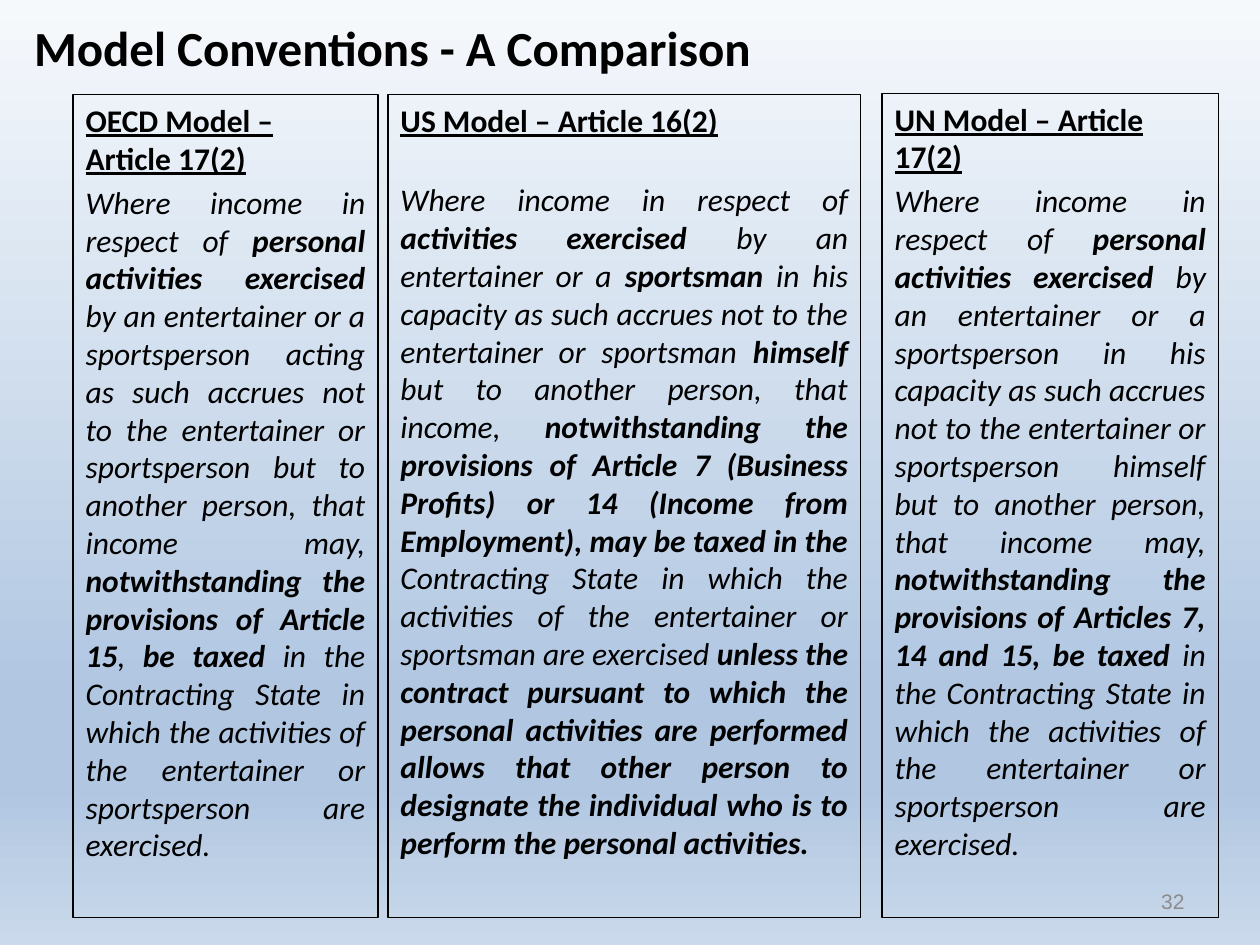
from copy import deepcopy

from pptx import Presentation
from pptx.dml.color import RGBColor
from pptx.enum.shapes import MSO_SHAPE
from pptx.enum.text import MSO_ANCHOR, MSO_AUTO_SIZE, PP_ALIGN
from pptx.oxml.ns import qn
from pptx.util import Inches, Pt

RECT = MSO_SHAPE.RECTANGLE
TOP, MIDDLE = MSO_ANCHOR.TOP, MSO_ANCHOR.MIDDLE
FIXED = MSO_AUTO_SIZE.NONE
LEFT, RIGHT, JUSTIFY = PP_ALIGN.LEFT, PP_ALIGN.RIGHT, PP_ALIGN.JUSTIFY
BLACK = RGBColor(0x00, 0x00, 0x00)
GREY = RGBColor(0x8C, 0x8C, 0x8C)
SKY = [
    (0, RGBColor(0xF6, 0xF9, 0xFC)),
    (0.74, RGBColor(0xB0, 0xC6, 0xE1)),
    (0.83, RGBColor(0xB0, 0xC6, 0xE1)),
    (1, RGBColor(0xCA, 0xD9, 0xEB)),
]

# Asterisks enclose the bold passages.
OECD = (
    "Where income in respect of *personal activities exercised *by an "
    "entertainer or a sportsperson acting as such accrues not to the "
    "entertainer or sportsperson but to another person, that income may, "
    "*notwithstanding the provisions of Article 15*, *be taxed* in the "
    "Contracting State in which the activities of the entertainer or "
    "sportsperson are exercised."
)
UN = (
    "Where income in respect of *personal activities exercised *by an "
    "entertainer or a sportsperson in his capacity as such accrues not to the "
    "entertainer or sportsperson himself but to another person, that income "
    "may, *notwithstanding the provisions of Articles 7, 14 and 15, be taxed "
    "*in the Contracting State in which the activities of the entertainer or "
    "sportsperson are exercised."
)
US = (
    "Where income in respect of *activities exercised* by an entertainer or a "
    "*sportsman* in his capacity as such accrues not to the entertainer or "
    "sportsman *himself *but to another person, that income, "
    "*notwithstanding the provisions of Article 7 (Business Profits) or 14 "
    "(Income from Employment), may be taxed in the *Contracting State in "
    "which the activities of the entertainer or sportsman are exercised "
    "*unless the contract pursuant to which the personal activities are "
    "performed allows that other person to designate the individual who is "
    "to perform the personal activities."
)


class Deck:
    font = "Calibri"
    size = 18
    gap = 3.6

    def __init__(self, slide):
        self.slide = slide

    def backdrop(self, stops):
        fill = self.slide.background.fill
        fill.gradient()
        fill.gradient_angle = 270
        node = next(self.slide.element.iter(qn("a:gsLst")))
        while len(node) < len(stops):
            node.append(deepcopy(node[0]))
        for stop, (place, color) in zip(fill.gradient_stops, stops):
            stop.position = place
            stop.color.rgb = color

    def place(self, shape, left, top, width, height, anchor):
        shape.left, shape.top = Inches(left), Inches(top)
        shape.width, shape.height = Inches(width), Inches(height)
        frame = shape.text_frame
        frame.word_wrap = True
        frame.auto_size = FIXED
        frame.vertical_anchor = anchor
        return frame

    def run(self, para, text, size=None, color=BLACK, name=None, **style):
        run = para.add_run()
        run.text = text
        font = run.font
        font.name = name or self.font
        font.size = Pt(size or self.size)
        font.color.rgb = color
        for key, value in style.items():
            setattr(font, key, value)

    def plain(self, para, align, gap):
        """Set alignment and space before, with no bullet or indent."""
        para.alignment = align
        para.space_before = Pt(gap)
        props = para._p.get_or_add_pPr()
        props.set("marL", "0")
        props.set("indent", "0")
        props.append(props.makeelement(qn("a:buNone"), {}))

    def title(self, text, *box):
        frame = self.place(self.slide.shapes.title, *box, MIDDLE)
        para = frame.paragraphs[0]
        para.alignment = JUSTIFY
        self.run(para, text, 28, bold=True)

    def column(self, shape, box, head, body, gap=gap):
        shape.fill.background()
        shape.line.color.rgb = BLACK
        shape.line.width = Pt(0.75)
        frame = self.place(shape, *box, TOP)
        para = frame.paragraphs[0]
        self.plain(para, LEFT, self.gap)
        self.run(para, head, bold=True, underline=True)
        para = frame.add_paragraph()
        self.plain(para, JUSTIFY, gap)
        for i, part in enumerate(body.split("*")):
            self.run(para, part, bold=i % 2 == 1, italic=True)

    def panel(self, *args):
        """Add a column in a rectangle of its own."""
        shape = self.slide.shapes.add_shape(RECT, 0, 0, 0, 0)
        shape.shadow.inherit = False
        self.column(shape, *args)

    def number(self, text, *box):
        shape = self.slide.shapes.add_textbox(0, 0, 0, 0)
        para = self.place(shape, *box, MIDDLE).paragraphs[0]
        para.alignment = RIGHT
        self.run(para, text, 12, GREY, "Arial")


def main():
    prs = Presentation()
    prs.slide_width, prs.slide_height = Inches(10), Inches(7.5)
    slide = prs.slides.add_slide(prs.slide_layouts[3])
    deck = Deck(slide)
    deck.backdrop(SKY)
    deck.title("Model Conventions - A Comparison", 0.17, 0, 9, 0.75)
    holders = slide.placeholders
    deck.column(holders[1], (0.58, 0.75, 2.42, 6.53),
                "OECD Model – Article 17(2)", OECD)
    deck.column(holders[2], (7, 0.74, 2.67, 6.54),
                "UN Model – Article 17(2)", UN)
    deck.panel((3.08, 0.75, 3.75, 6.53), "US Model – Article 16(2)", US, 24)
    deck.number("32", 7.17, 6.95, 2.33, 0.4)
    prs.save("out.pptx")


if __name__ == "__main__":
    main()
